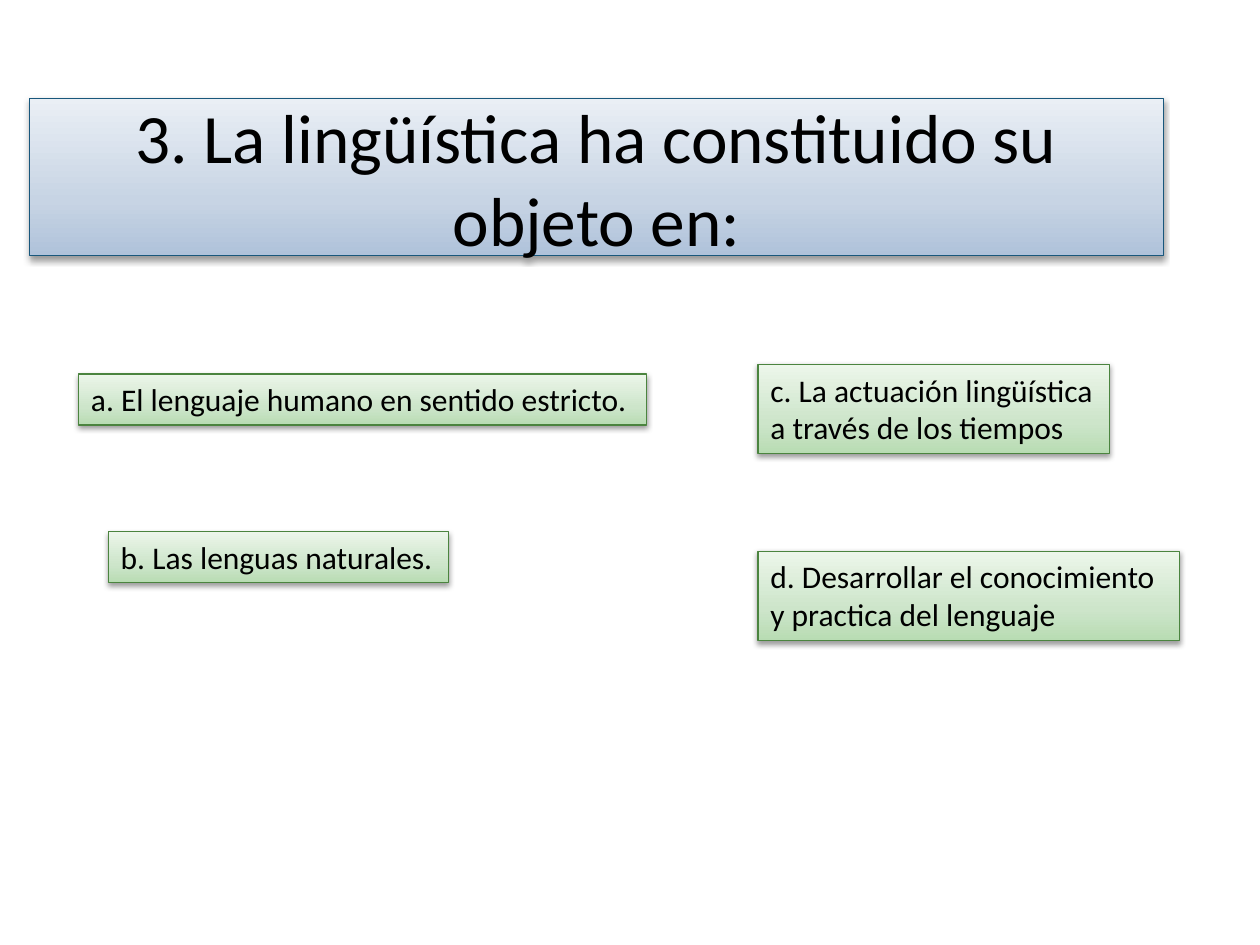
import pptx
import pptx.util
import pptx.dml.color
import pptx.enum.text
import pptx.oxml
import pptx.oxml.ns

Pt = pptx.util.Pt
FONT = "Calibri"
HUES = {
    "text": "000000",
    "blue": ["AFC2DA", "C7D4E4", "EAEFF5"],
    "blue line": "18577C",
    "green": ["B8DCB3", "CDE5CA", "ECF6EA"],
    "green line": "4B843F",
}
NS = pptx.oxml.ns.nsdecls("a")
SHADE = (
    f'<a:effectLst {NS}><a:outerShdw blurRad="{Pt(3.15)}" dist="{Pt(1.6)}" '
    'dir="5400000" rotWithShape="0"><a:srgbClr val="000000">'
    '<a:alpha val="38000"/></a:srgbClr></a:outerShdw></a:effectLst>'
)


def rgb(name):
    return pptx.dml.color.RGBColor.from_string(HUES[name])


def paint(shape, hue):
    """Give a shape its vertical gradient, thin outline and soft shadow."""
    stops = "".join(
        f'<a:gs pos="{pos * 1000}"><a:srgbClr val="{tone}"/></a:gs>'
        for pos, tone in zip((0, 35, 100), HUES[hue])
    )
    grad = (
        f'<a:gradFill {NS} rotWithShape="1"><a:gsLst>{stops}</a:gsLst>'
        '<a:lin ang="16200000" scaled="0"/></a:gradFill>'
    )
    shape.fill.background()
    props = shape.element.spPr
    old = props.find(pptx.oxml.ns.qn("a:noFill"))
    props.replace(old, pptx.oxml.parse_xml(grad))
    shape.line.color.rgb = rgb(hue + " line")
    shape.line.width = Pt(0.75)
    props.append(pptx.oxml.parse_xml(SHADE))


def write(para, text, size):
    run = para.add_run()
    run.text = text
    run.font.name = FONT
    run.font.size = Pt(size)
    run.font.color.rgb = rgb("text")


def head(slide, box, text):
    """Title banner."""
    title = slide.shapes.title
    title.left, title.top, title.width, title.height = map(Pt, box)
    paint(title, "blue")
    frame = title.text_frame
    frame.word_wrap = True
    frame.auto_size = pptx.enum.text.MSO_AUTO_SIZE.NONE
    frame.vertical_anchor = pptx.enum.text.MSO_ANCHOR.MIDDLE
    para = frame.paragraphs[0]
    para.alignment = pptx.enum.text.PP_ALIGN.CENTER
    write(para, text, 39.6)


def choice(slide, box, lines):
    """Answer box, one paragraph a line."""
    label = slide.shapes.add_textbox(*map(Pt, box))
    paint(label, "green")
    frame = label.text_frame
    frame.word_wrap = False
    frame.auto_size = pptx.enum.text.MSO_AUTO_SIZE.SHAPE_TO_FIT_TEXT
    for i, line in enumerate(lines):
        para = frame.add_paragraph() if i else frame.paragraphs[0]
        write(para, line, 18)


def main():
    deck = pptx.Presentation()
    deck.slide_width, deck.slide_height = Pt(720), Pt(540)
    slide = deck.slides.add_slide(deck.slide_layouts[5])

    head(slide, (16.8, 56.2, 648, 90),
         "3. La lingüística ha constituido su objeto en:")

    # Answers: left, top, width, lines
    right = 433.1
    for left, top, width, lines in (
        (44.9, 213.8, 324.5, ["a. El lenguaje humano en sentido estricto."]),
        (61.9, 303.8, 194.6, ["b. Las lenguas naturales."]),
        (right, 208.2, 201, ["c. La actuación lingüística",
                             "a través de los tiempos"]),
        (right, 315, 240.8, ["d. Desarrollar el conocimiento",
                             "y practica del lenguaje"]),
    ):
        tall = 7.2 + 21.9 * len(lines)
        choice(slide, (left, top, width, tall), lines)

    deck.save("out.pptx")


if __name__ == "__main__":
    main()
